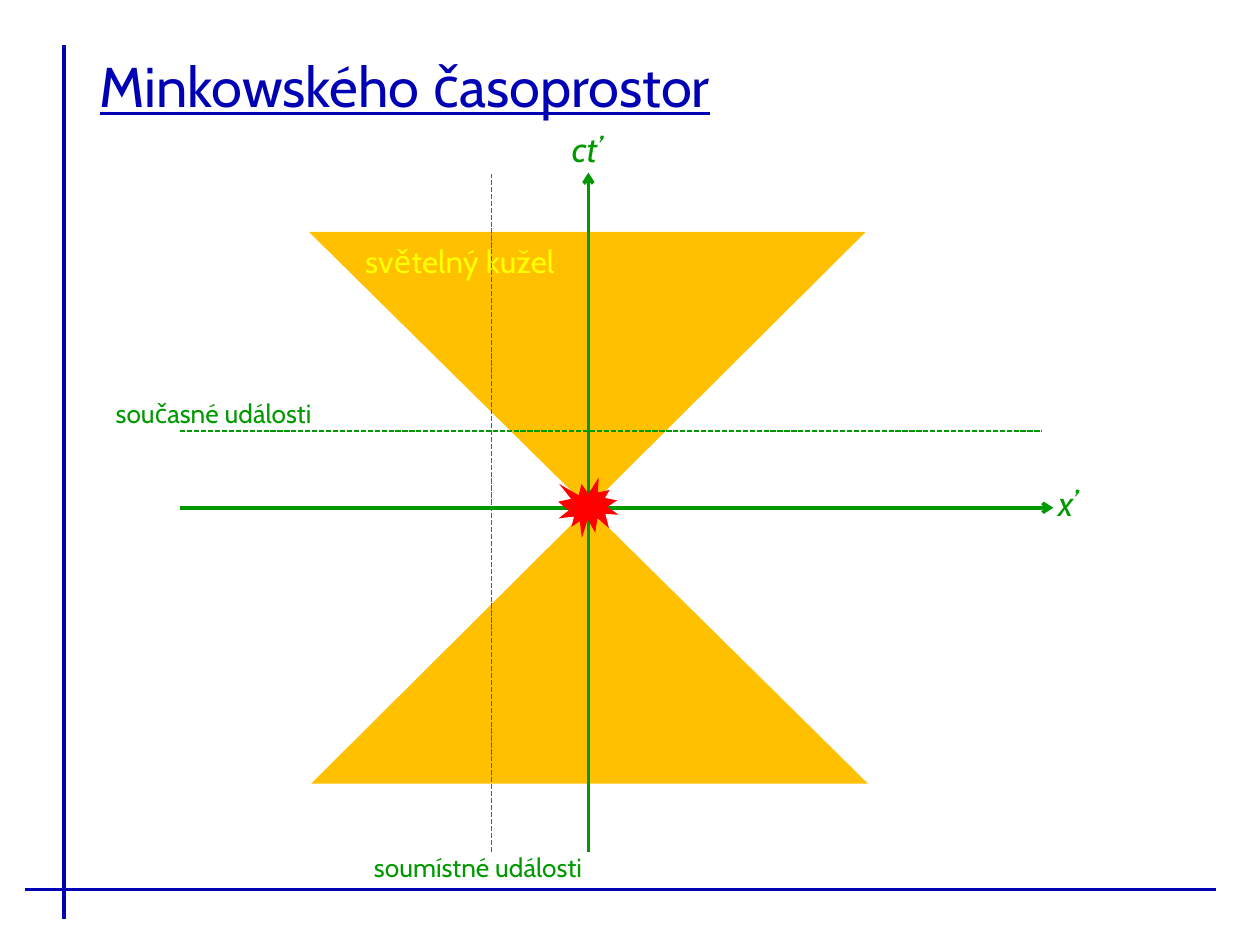
import dataclasses
import pptx
import pptx.dml.color
import pptx.enum.dml
import pptx.enum.shapes
import pptx.enum.text
import pptx.oxml.ns
import pptx.util
import lxml.etree

KIND = pptx.enum.shapes.MSO_SHAPE
CELL = 0.1


@dataclasses.dataclass(frozen=True)
class Theme:
    """Hold the colours and type sizes of the slide."""
    font: str = "Cabin"
    blue: str = "0000B4"
    green: str = "009900"
    gold: str = "FFC000"
    yellow: str = "FFFF00"
    red: str = "FF0000"
    title: int = 32
    axis: int = 20
    cone: int = 18
    note: int = 15


@dataclasses.dataclass(frozen=True)
class Box:
    """Hold a region's origin and size in grid cells."""
    left: float
    top: float
    wide: float
    high: float

    def inner(self, col, row, wide, high):
        """Return a box placed relative to this one."""
        return Box(self.left + col, self.top + row, wide, high)

    def spot(self, col, row):
        """Return a point relative to this box as lengths."""
        return size(self.left + col), size(self.top + row)

    def frame(self):
        """Return left, top, width and height as lengths."""
        return [size(n) for n in (self.left, self.top, self.wide, self.high)]


THEME = Theme()


def size(cells):
    """Turn grid cells into a length."""
    return pptx.util.Inches(cells * CELL)


def tint(code):
    """Turn a hex code into a colour."""
    return pptx.dml.color.RGBColor.from_string(code)


def write(shape, text, points, color, italic=None, under=None):
    """Write one left-aligned line of text into a shape."""
    frame = shape.text_frame
    frame.word_wrap = True
    frame.vertical_anchor = pptx.enum.text.MSO_ANCHOR.TOP
    line = frame.paragraphs[0]
    line.alignment = pptx.enum.text.PP_ALIGN.LEFT
    run = line.add_run()
    run.text = text
    font = run.font
    font.name, font.size = THEME.font, pptx.util.Pt(points)
    font.italic, font.underline = italic, under
    font.color.rgb = tint(color)


def label(shapes, box, text, points, color, italic=None):
    """Add a text box with one line."""
    write(shapes.add_textbox(*box.frame()), text, points, color, italic)


def rule(shapes, start, end, color, points=2, dash=False, arrow=False):
    """Add a straight line, dashed or with an arrowhead if asked."""
    line = shapes.add_connector(
        pptx.enum.shapes.MSO_CONNECTOR.STRAIGHT, *start, *end)
    line.line.color.rgb = tint(color)
    line.line.width = pptx.util.Pt(points)
    if dash:
        line.line.dash_style = pptx.enum.dml.MSO_LINE.SQUARE_DOT
    props = line._element.spPr
    if arrow:
        stroke = props.find(pptx.oxml.ns.qn("a:ln"))
        tip = lxml.etree.SubElement(stroke, pptx.oxml.ns.qn("a:tailEnd"))
        tip.set("type", "arrow")
    lxml.etree.SubElement(props, pptx.oxml.ns.qn("a:effectLst"))


def solid(shapes, kind, box, color):
    """Add a filled shape without outline or shadow."""
    shape = shapes.add_shape(kind, *box.frame())
    shape.shadow.inherit = False
    shape.fill.solid()
    shape.fill.fore_color.rgb = tint(color)
    shape.line.fill.background()
    return shape


def border(shapes, box):
    """Draw the two crossing lines of the page."""
    rule(shapes, box.spot(3.1, 0), box.spot(3.1, box.high), THEME.blue)
    rule(shapes, box.spot(box.wide, 67), box.spot(0, 67), THEME.blue)


def head(slide, box):
    """Place and write the title."""
    title = slide.shapes.title
    title.left, title.top, title.width, title.height = box.frame()
    write(title, "Minkowského časoprostor", THEME.title, THEME.blue, under=True)
    title.text_frame.auto_size = pptx.enum.text.MSO_AUTO_SIZE.NONE


def cones(shapes, box):
    """Draw both light cones with tips at the box origin."""
    wide, high, tip = 44.2, 21.9, 0.498
    for turn, left, top in ((0, -tip, 0), (180, tip - 1, -high)):
        cone = solid(shapes, KIND.ISOSCELES_TRIANGLE,
                     box.inner(left * wide, top, wide, high), THEME.gold)
        cone.adjustments[0] = tip
        cone.rotation = turn
    label(shapes, box.inner(-18.7, -21.6, 18.9, 4), "světelný kužel",
          THEME.cone, THEME.yellow)


def events(shapes, box, start, end, place, text):
    """Draw a dashed line of events and its label."""
    rule(shapes, box.spot(*start), box.spot(*end), THEME.green, 1, dash=True)
    label(shapes, box.inner(*place, 22.4, 3.5), text, THEME.note, THEME.green)


def chart(shapes, box):
    """Draw the spacetime diagram around the event at the box origin."""
    left, low = -32.4, 27.3
    rule(shapes, box.spot(left, 0), box.spot(36.9, 0), THEME.green, arrow=True)
    for text, place in (("ct’", (-2.3, -30.7, 5.8, 4.4)),
                        ("x’", (36.3, -2.6, 4.8, 4.4))):
        label(shapes, box.inner(*place), text, THEME.axis, THEME.green, True)
    cones(shapes.add_group_shape().shapes, box)
    events(shapes.add_group_shape().shapes, box, (left, -6.1), (36, -6.1),
           (-38.5, -9.3), "současné události")
    events(shapes.add_group_shape().shapes, box, (-7.7, low), (-7.7, -26.5),
           (-18, 26.8), "soumístné události")
    rule(shapes, box.spot(0, low), box.spot(0, -26.6), THEME.green, arrow=True)
    solid(shapes, KIND.EXPLOSION1, box.inner(-2.4, -2.4, 4.8, 4.8), THEME.red)


def main():
    """Build and save the slide."""
    deck = pptx.Presentation()
    deck.slide_width, deck.slide_height = size(100), size(75)
    slide = deck.slides.add_slide(deck.slide_layouts[5])
    border(slide.shapes, Box(2, 3.6, 94.5, 69.3))
    head(slide, Box(6.9, 3.6, 54.8, 6.4))
    chart(slide.shapes, Box(46.7, 40.3, 0, 0))
    deck.save("out.pptx")


if __name__ == "__main__":
    main()
